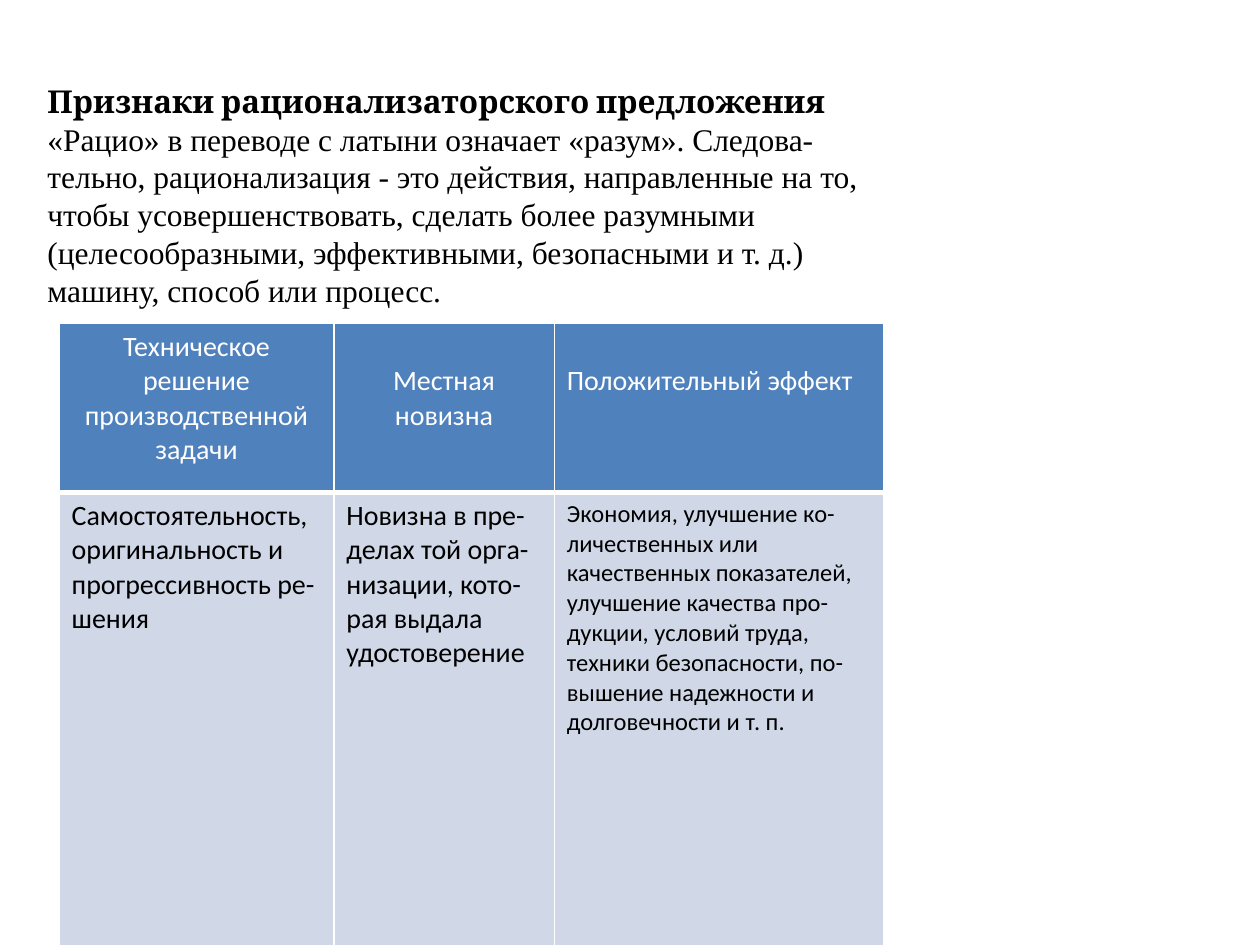
from lxml.etree import SubElement
from pptx import Presentation
from pptx.dml.color import RGBColor
from pptx.enum.text import MSO_AUTO_SIZE, PP_ALIGN
from pptx.oxml.ns import qn
from pptx.util import Pt

COLORS = {"text": "000000", "white": "FFFFFF", "header": "4F81BD", "body": "D0D8E8"}


def write_text(text_frame, lines, font="Calibri", size=16, color="text",
               bold=False, align=PP_ALIGN.LEFT):
    """Write one paragraph per line, continuing after any text already there."""
    for line in lines:
        paragraph = text_frame.paragraphs[-1]
        if paragraph.runs:
            paragraph = text_frame.add_paragraph()
        paragraph.alignment = align
        run = paragraph.add_run()
        run.text = line
        run.font.name = font
        run.font.size = Pt(size)
        run.font.bold = bold
        run.font.color.rgb = RGBColor.from_string(COLORS[color])


def set_borders(cell, **widths):
    """Draw white cell borders; keys are left, right, top and bottom, in that order."""
    properties = cell._tc.get_or_add_tcPr()
    for position, (side, width) in enumerate(widths.items()):
        line = SubElement(properties, qn(f"a:ln{side[0].upper()}"), w=str(Pt(width)))
        fill = SubElement(line, qn("a:solidFill"))
        SubElement(fill, qn("a:srgbClr"), val=COLORS["white"])
        properties.insert(position, line)


presentation = Presentation()
presentation.slide_width, presentation.slide_height = Pt(720), Pt(540)
slide = presentation.slides.add_slide(presentation.slide_layouts[6])

# Heading and introduction
introduction = slide.shapes.add_textbox(Pt(20), Pt(43.2), Pt(499), Pt(160)).text_frame
introduction.word_wrap = True
introduction.auto_size = MSO_AUTO_SIZE.SHAPE_TO_FIT_TEXT
write_text(introduction, ["Признаки рационализаторского предложения"],
           font="Cambria", size=18, bold=True)
write_text(introduction, [
    "«Рацио» в переводе с латыни означает «разум». Следова-",
    "тельно, рационализация - это действия, направленные на то,",
    "чтобы усовершенствовать, сделать более разумными (целесообразными, "
    "эффективными, безопасными и т. д.) машину, способ или процесс.",
], font="Times New Roman", size=18)

# Table of features: width, header lines, header alignment, header top margin,
# body lines and body text size of each column
columns = [
    (157, ["Техническое", "решение", "производственной", "задачи"], PP_ALIGN.CENTER, 3.6,
     ["Самостоятельность,", "оригинальность и", "прогрессивность ре-", "шения"], 16),
    (126, ["Местная", "новизна"], PP_ALIGN.CENTER, 23.1,
     ["Новизна в пре-", "делах той орга-", "низации, кото-", "рая выдала",
      "удостоверение"], 16),
    (188, ["Положительный эффект"], PP_ALIGN.LEFT, 23.1,
     ["Экономия, улучшение ко-", "личественных или", "качественных показателей,",
      "улучшение качества про-", "дукции, условий труда,", "техники безопасности, по-",
      "вышение надежности и", "долговечности и т. п."], 14),
]
row_heights = [96.5, 472.3]
table = slide.shapes.add_table(
    len(row_heights), len(columns), Pt(33.8), Pt(185),
    Pt(sum(column[0] for column in columns)), Pt(sum(row_heights))).table
table.first_row = table.horz_banding = False
for row, height in zip(table.rows, row_heights):
    row.height = Pt(height)

for index, (width, title, align, top_margin, details, size) in enumerate(columns):
    table.columns[index].width = Pt(width)
    header, body = table.cell(0, index), table.cell(1, index)
    header.margin_top = Pt(top_margin)
    write_text(header.text_frame, title, color="white", align=align)
    write_text(body.text_frame, details, size=size)
    for cell, color in ((header, "header"), (body, "body")):
        cell.fill.solid()
        cell.fill.fore_color.rgb = RGBColor.from_string(COLORS[color])
    set_borders(header, left=1, right=1, top=1, bottom=3)
    set_borders(body, left=1, right=1, top=3, bottom=1)

presentation.save("out.pptx")
